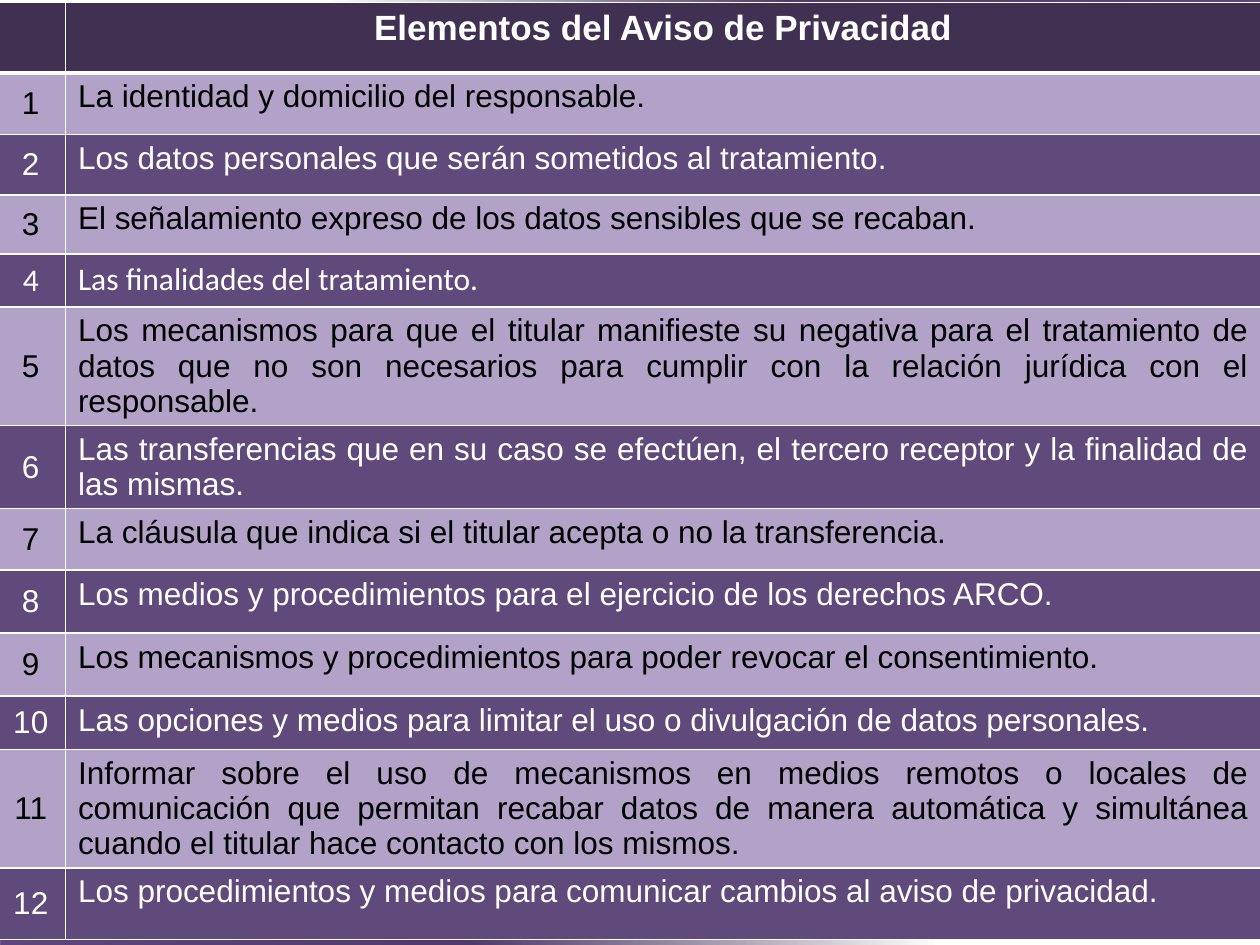
from lxml import etree
from pptx import Presentation
from pptx.dml.color import RGBColor
from pptx.enum.shapes import MSO_SHAPE
from pptx.enum.text import MSO_ANCHOR, PP_ALIGN
from pptx.oxml import parse_xml
from pptx.oxml.ns import qn
from pptx.util import Cm, Pt

RECTANGLE = MSO_SHAPE.RECTANGLE
MIDDLE, TOP = MSO_ANCHOR.MIDDLE, MSO_ANCHOR.TOP
CENTER, JUSTIFY = PP_ALIGN.CENTER, PP_ALIGN.JUSTIFY

WHITE = RGBColor(0xFF, 0xFF, 0xFF)
BLACK = RGBColor(0x00, 0x00, 0x00)
HEADER = RGBColor(0x40, 0x31, 0x52)
LIGHT = RGBColor(0xB3, 0xA2, 0xC7)
DARK = RGBColor(0x60, 0x4A, 0x7B)
BAND_STOPS = (
    (0, RGBColor(0x39, 0x29, 0x4B), 0),
    (50, RGBColor(0x51, 0x3B, 0x6B), 100),
    (100, RGBColor(0x60, 0x46, 0x7E), 100),
)
DRAWING = "http://schemas.openxmlformats.org/drawingml/2006/main"

TITLE = "Elementos del Aviso de Privacidad"
HEADER_HEIGHT = 1.42
ELEMENTS = (
    ("La identidad y domicilio del responsable.", 1.24),
    ("Los datos personales que serán sometidos al tratamiento.", 1.22),
    ("El señalamiento expreso de los datos sensibles que se recaban.", 1.19),
    ("Las finalidades del tratamiento.", 1.07),
    ("Los mecanismos para que el titular manifieste su negativa para el "
     "tratamiento de datos que no son necesarios para cumplir con la relación "
     "jurídica con el responsable.", 2.16),
    ("Las transferencias que en su caso se efectúen, el tercero receptor y la "
     "finalidad de las mismas.", 1.52),
    ("La cláusula que indica si el titular acepta o no la transferencia.", 1.24),
    ("Los medios y procedimientos para el ejercicio de los derechos ARCO.", 1.27),
    ("Los mecanismos y procedimientos para poder revocar el consentimiento.", 1.27),
    ("Las opciones y medios para limitar el uso o divulgación de datos "
     "personales.", 1.07),
    ("Informar sobre el uso de mecanismos en medios remotos o locales de "
     "comunicación que permitan recabar datos de manera automática y simultánea "
     "cuando el titular hace contacto con los mismos.", 2.16),
    ("Los procedimientos y medios para comunicar cambios al aviso de "
     "privacidad.", 1.45),
)
CALIBRI_ROWS = {4}
SPACED_ROWS = {5, 11}


def add_band(slide, left, top, width, height, rotation=0):
    band = slide.shapes.add_shape(
        RECTANGLE, Cm(left), Cm(top), Cm(width), Cm(height))
    band.shadow.inherit = False
    band.rotation = rotation
    band.line.fill.background()
    stops = "".join(
        f'<a:gs pos="{position * 1000}"><a:srgbClr val="{color}">'
        f'<a:alpha val="{opacity * 1000}"/></a:srgbClr></a:gs>'
        for position, color, opacity in BAND_STOPS)
    gradient = parse_xml(
        f'<a:gradFill xmlns:a="{DRAWING}" rotWithShape="1">'
        f'<a:gsLst>{stops}</a:gsLst><a:lin ang="0" scaled="0"/></a:gradFill>')
    band._element.spPr.find(qn("a:prstGeom")).addnext(gradient)


def set_borders(cell, top=1, bottom=1):
    properties = cell._tc.get_or_add_tcPr()
    for side, width in (("L", 1), ("R", 1), ("T", top), ("B", bottom)):
        line = etree.SubElement(properties, qn(f"a:ln{side}"), w=str(Pt(width)))
        fill = etree.SubElement(line, qn("a:solidFill"))
        etree.SubElement(fill, qn("a:srgbClr"), val=str(WHITE))


def paint_cell(cell, color, **borders):
    set_borders(cell, **borders)
    cell.fill.solid()
    cell.fill.fore_color.rgb = color


def write_text(cell, text, color=WHITE, size=18, font="Arial", bold=False,
               align=JUSTIFY, anchor=TOP, space_after=0):
    cell.vertical_anchor = anchor
    para = cell.text_frame.paragraphs[0]
    para.alignment = align
    para.space_after = Pt(space_after)
    span = para.add_run()
    span.text = text
    span.font.name = font
    span.font.size = Pt(size)
    span.font.bold = bold
    span.font.color.rgb = color


def add_elements_table(slide):
    heights = [HEADER_HEIGHT] + [height for _, height in ELEMENTS]
    frame = slide.shapes.add_table(
        len(heights), 2, Cm(-0.08), Cm(0.05), Cm(25.5), Cm(sum(heights)))
    table = frame.table
    table.first_row = False
    table.horz_banding = False
    for column, width in zip(table.columns, (1.4, 24.1)):
        column.width = Cm(width)
    for row, height in zip(table.rows, heights):
        row.height = Cm(height)

    for column in range(2):
        paint_cell(table.cell(0, column), HEADER, bottom=3)
    write_text(table.cell(0, 1), TITLE, size=20, bold=True, align=CENTER)

    for number, (element, _) in enumerate(ELEMENTS, start=1):
        fill, color = (LIGHT, BLACK) if number % 2 else (DARK, WHITE)
        style = {
            "color": color,
            "font": "Calibri" if number in CALIBRI_ROWS else "Arial",
            "space_after": 1 if number in SPACED_ROWS else 0,
        }
        for column in range(2):
            paint_cell(table.cell(number, column), fill,
                       top=3 if number == 1 else 1)
        write_text(table.cell(number, 0), str(number), align=CENTER,
                   anchor=MIDDLE, **style)
        write_text(table.cell(number, 1), element, **style)


def main():
    deck = Presentation()
    deck.slide_width, deck.slide_height = Cm(25.4), Cm(19.05)
    slide = deck.slides.add_slide(deck.slide_layouts[6])
    slide.background.fill.solid()
    slide.background.fill.fore_color.rgb = WHITE
    add_band(slide, 6.55, 0, 18.85, 3.18)
    add_band(slide, 0, 18.64, 18.85, 0.41, rotation=180)
    add_elements_table(slide)
    deck.save("out.pptx")


if __name__ == "__main__":
    main()
